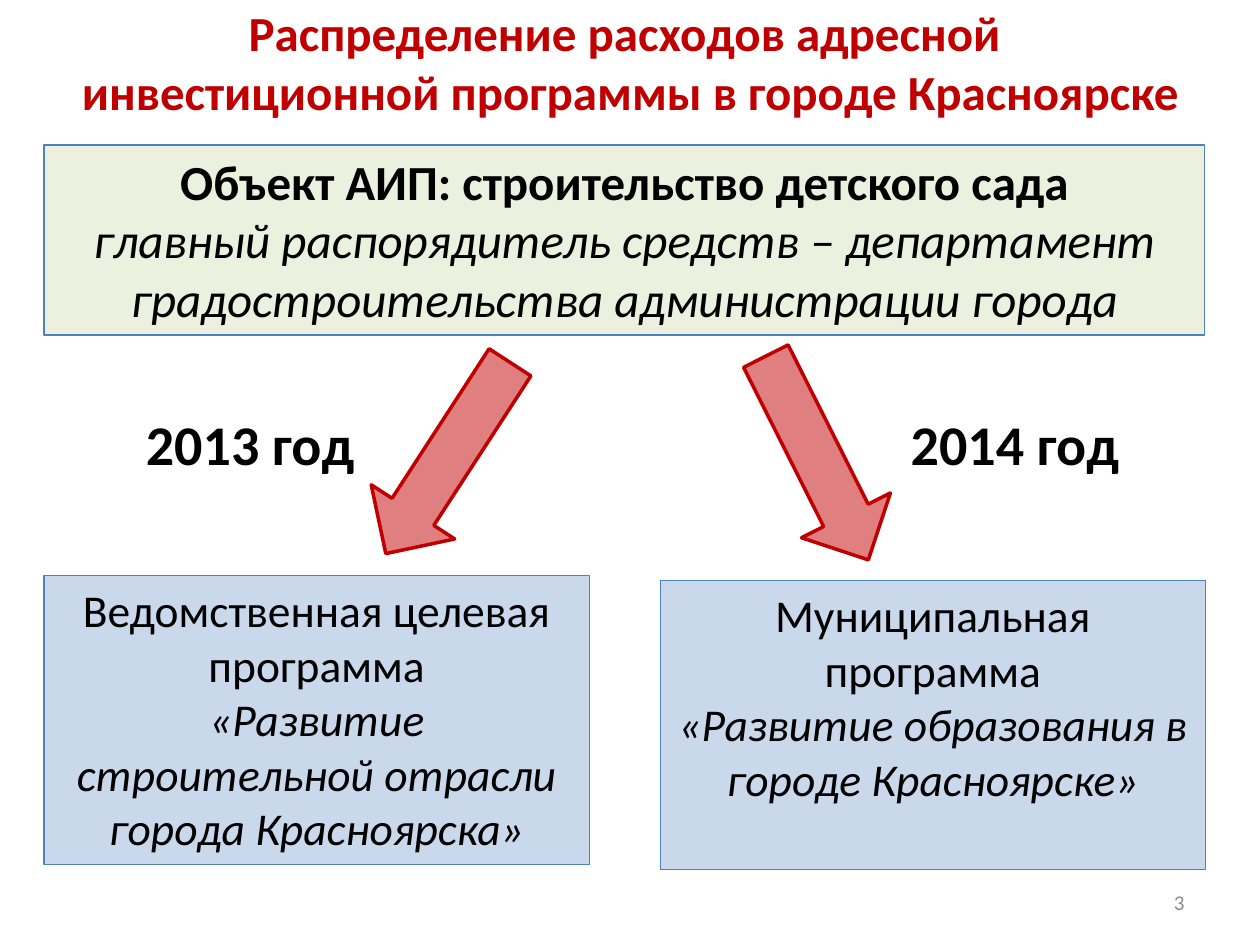
"""Build the slide on how investment programme spending is distributed."""
from dataclasses import dataclass

from lxml.etree import SubElement
from pptx import Presentation
from pptx.dml.color import RGBColor as Rgb
from pptx.enum.shapes import MSO_SHAPE as Form
from pptx.enum.text import MSO_ANCHOR as Anchor, PP_ALIGN as Align
from pptx.oxml.ns import qn
from pptx.util import Inches, Pt


@dataclass(frozen=True)
class Theme:
    face: str = "Calibri"
    red: str = "C00000"
    blue: str = "4F81BD"
    green: str = "EBF1DE"
    black: str = "000000"
    grey: str = "8C8C8C"
    year: int = 32
    head: int = 28
    body: int = 26
    note: int = 12
    thin: float = 0.75
    thick: float = 2


class Deck:
    def __init__(self, theme):
        self.theme = theme
        self.deck = Presentation()
        self.deck.slide_width = Inches(10)
        self.deck.slide_height = Inches(7.5)
        self.slide = self.deck.slides.add_slide(self.deck.slide_layouts[6])

    def shape(self, form, area, fill, line, width, alpha=100):
        item = self.slide.shapes.add_shape(form, *map(Inches, area))
        item.shadow.inherit = False
        item.fill.solid()
        item.fill.fore_color.rgb = Rgb.from_string(fill)
        if alpha < 100:
            tint = item._element.spPr.find(qn("a:solidFill")).find(qn("a:srgbClr"))
            SubElement(tint, qn("a:alpha"), val=str(alpha * 1000))
        item.line.color.rgb = Rgb.from_string(line)
        item.line.width = Pt(width)
        return item

    def words(self, frame, lines, size, color, align=Align.CENTER):
        for n, (text, bold, slant) in enumerate(lines):
            para = frame.add_paragraph() if n else frame.paragraphs[0]
            para.alignment = align
            font = para.font
            font.name, font.size = self.theme.face, Pt(size)
            font.bold, font.italic = bold, slant
            font.color.rgb = Rgb.from_string(color)
            para.add_run().text = text

    def box(self, area, lines, size, fill, alpha=100):
        look = self.theme
        item = self.shape(Form.RECTANGLE, area, fill, look.blue, look.thin, alpha)
        frame = item.text_frame
        frame.word_wrap = True
        frame.vertical_anchor = Anchor.TOP
        self.words(frame, lines, size, look.black)

    def text(self, area, lines, size, color, align, anchor=Anchor.MIDDLE, wrap=True):
        frame = self.slide.shapes.add_textbox(*map(Inches, area)).text_frame
        frame.word_wrap = wrap
        frame.vertical_anchor = anchor
        self.words(frame, lines, size, color, align)

    def arrow(self, left, turn):
        look = self.theme
        area = (left, 2.73, 0.79, 1.81)
        item = self.shape(Form.DOWN_ARROW, area, look.red, look.red, look.thick, 50)
        item.rotation = turn


def main():
    look = Theme()
    show = Deck(look)
    title = [
        ("Распределение расходов адресной ", True, False),
        ("инвестиционной программы в городе Красноярске", True, False),
    ]
    show.text((0, 0.05, 10, 0.87), title, look.head, look.red, Align.CENTER)
    goal = [
        ("Объект АИП: строительство детского сада", True, False),
        ("главный распорядитель средств – департамент "
         "градостроительства администрации города", False, True),
    ]
    show.box((0.35, 1.15, 9.21, 1.51), goal, look.head, look.green)

    plans = [
        (0.35, 4.57, "Ведомственная целевая программа",
         "«Развитие строительной отрасли города Красноярска»"),
        (5.24, 4.61, "Муниципальная программа",
         "«Развитие образования в городе Красноярске»"),
    ]
    for left, top, kind, name in plans:
        lines = [(kind, False, False), (name, False, True)]
        show.box((left, top, 4.33, 2.29), lines, look.body, look.blue, 30)

    for left, year in ((1.06, "2013 год"), (7.13, "2014 год")):
        show.text((left, 3.2, 1.86, 0.64), [(year, True, False)], look.year,
                  look.black, Align.LEFT, Anchor.TOP, False)
    for left, turn in ((3.16, 33), (6.09, 333.3)):
        show.arrow(left, turn)
    show.text((8.94, 6.95, 0.56, 0.42), [("3", False, False)], look.note,
              look.grey, Align.RIGHT)
    show.deck.save("out.pptx")


if __name__ == "__main__":
    main()
